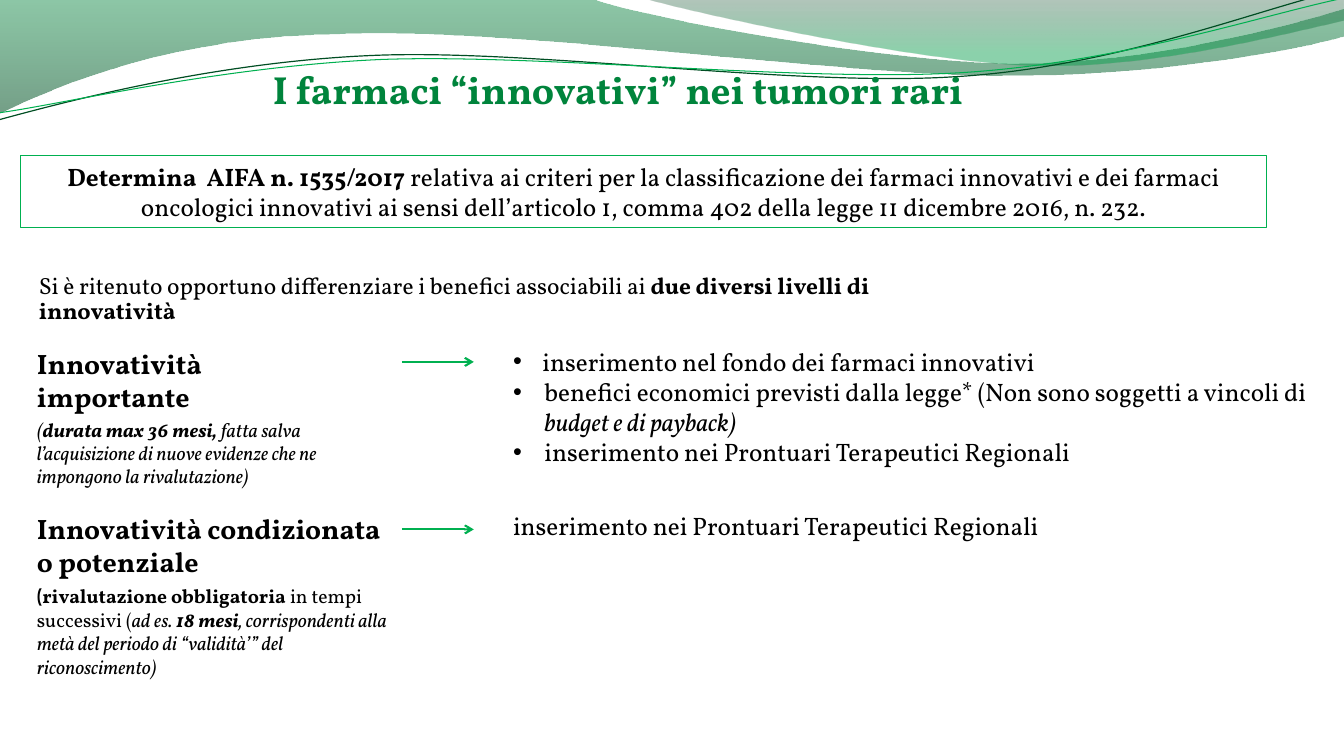
import pptx
import pptx.dml.color
import pptx.enum.shapes
import pptx.enum.text
import pptx.oxml
import pptx.oxml.ns
import pptx.util
from dataclasses import dataclass

Cm, Pt = pptx.util.Cm, pptx.util.Pt
RGB = pptx.dml.color.RGBColor.from_string
ALIGN, ANCHOR = pptx.enum.text.PP_ALIGN, pptx.enum.text.MSO_ANCHOR
qn, NS = pptx.oxml.ns.qn, pptx.oxml.ns.nsdecls("a")


@dataclass(frozen=True)
class Theme:
    font: str = "Vollkorn"
    title_color: str = "00843C"
    text: str = "000000"
    accent: str = "00B050"
    dark: str = "004E23"
    title: float = 28
    heading: float = 20
    body: float = 18
    intro: float = 16.7
    note: float = 14


T = Theme()


def set_frame(shape, box, inset=(0, 0), anchor=ANCHOR.TOP):
    """Place the shape at box (cm) and return its wrapped text frame."""
    shape.left, shape.top, shape.width, shape.height = map(Cm, box)
    tf = shape.text_frame
    tf.word_wrap = True
    tf.auto_size = pptx.enum.text.MSO_AUTO_SIZE.NONE
    tf.margin_left = tf.margin_right = Cm(inset[0])
    tf.margin_top = tf.margin_bottom = Cm(inset[1])
    tf.vertical_anchor = anchor
    return tf


def add_runs(p, size, runs, color=T.text, before=0):
    """Add (text, style) runs; style may hold b for bold and i for italic."""
    p.space_before = Pt(before)
    for text, style in runs:
        r = p.add_run()
        r.text = text
        r.font.name = T.font
        r.font.size = Pt(size)
        r.font.bold = "b" in style
        r.font.italic = "i" in style
        r.font.color.rgb = RGB(color)


prs = pptx.Presentation()
prs.slide_width, prs.slide_height = Cm(33.87), Cm(19.05)
s = prs.slides.add_slide(prs.slide_layouts[3])
title, intro, benefits = s.placeholders

# Header waves: each segment is one point (line) or three points (cubic curve), in cm
waves = [
    ((0, -0.02), [
        [(14.91, -0.03)],
        [(16.1, 0.43), (22.48, 1.6), (25.68, 1.6)],
        [(28.88, 1.6), (32.46, 0.66), (33.86, 0.23)],
        [(33.91, 0.91)],
        [(33.3, 1.12), (29.46, 1.93), (25.25, 1.91)],
        [(21.06, 1.91), (12.93, 0.71), (8.71, 0.86)],
        [(4.37, 0.91), (1.55, 2.11), (-0.03, 2.87)],
    ], [(0, "00823B", 45), (1, "005024", 55)], None),
    ((16.23, -0.03), [
        [(17.25, 0.28), (23.09, 1.57), (26.04, 1.65)],
        [(28.98, 1.75), (32.56, 0.81), (33.86, 0.53)],
        [(33.86, 0)],
    ], [(0, "00411E", 30), (0.8, "009B47", 45)], None),
    ((-0.03, 3.02), [
        [(1.63, 2.57), (5.36, 1.57), (9.37, 1.4)],
        [(13.39, 1.22), (20.04, 2.21), (24.13, 1.93)],
        [(28.19, 1.68), (31.78, 0.2), (33.81, -0.25)],
    ], None, (T.dark, 0.85)),
    ((0, 2.84), [
        [(1.6, 2.62), (5.54, 1.68), (9.6, 1.5)],
        [(13.64, 1.35), (20.21, 2.08), (24.26, 1.83)],
        [(28.32, 1.57), (31.88, 0.36), (33.88, -0.05)],
    ], None, (T.accent, 0.75)),
]
for layer, (start, segments, stops, line) in enumerate(waves):
    builder = s.shapes.build_freeform(*map(Cm, start))
    builder.add_line_segments([tuple(map(Cm, seg[-1])) for seg in segments], close=bool(stops))
    wave = builder.convert_to_shape()
    wave.shadow.inherit = False
    for edge, seg in zip(list(wave._element.iter(qn("a:lnTo"))), segments):
        if len(seg) == 3:
            pts = "".join(f'<a:pt x="{Cm(x) - wave.left}" y="{Cm(y) - wave.top}"/>' for x, y in seg)
            curve = pptx.oxml.parse_xml(f"<a:cubicBezTo {NS}>{pts}</a:cubicBezTo>")
            edge.getparent().replace(edge, curve)
    if stops:
        wave.line.fill.background()
        wave.fill.gradient()
        wave.fill.gradient_angle = 270
        for stop, (position, color, _) in zip(wave.fill.gradient_stops, stops):
            stop.position = position
            stop.color.rgb = RGB(color)
        for clr, (_, _, opacity) in zip(wave._element.spPr.iter(qn("a:srgbClr")), stops):
            clr.append(pptx.oxml.parse_xml(f'<a:alpha {NS} val="{opacity * 1000}"/>'))
    else:
        wave.fill.background()
        wave.line.color.rgb = RGB(line[0])
        wave.line.width = Pt(line[1])
    s.shapes._spTree.insert(2 + layer, wave._element)  # behind the placeholders

tf = set_frame(title, (0.33, 1.52, 30.48, 3.18), (0.25, 0.13))
tf.paragraphs[0].alignment = ALIGN.CENTER
add_runs(tf.paragraphs[0], T.title, [("I farmaci “innovativi” nei tumori rari", "b")], T.title_color)

decree = s.shapes.add_shape(pptx.enum.shapes.MSO_SHAPE.RECTANGLE, 0, 0, 0, 0)
decree.shadow.inherit = False
decree.fill.background()
decree.line.color.rgb = RGB(T.accent)
decree.line.width = Pt(0.75)
tf = set_frame(decree, (0.52, 3.92, 31.39, 1.81), (0.25, 0.13), ANCHOR.MIDDLE)
tf.paragraphs[0].alignment = ALIGN.CENTER
add_runs(tf.paragraphs[0], T.body, [
    ("Determina  AIFA n. 1535/2017 ", "b"),
    ("relativa ai criteri per la classificazione dei farmaci innovativi e dei farmaci oncologici "
     "innovativi ai sensi dell’articolo 1, comma 402 della legge 11 dicembre 2016, n. 232.", ""),
])

tf = set_frame(intro, (0.73, 6.32, 23.6, 2.08), (0.25, 0.59))
p = tf.paragraphs[0]
p.line_spacing = 0.9
add_runs(p, T.intro, [
    ("Si è ritenuto opportuno differenziare i benefici associabili ai ", ""),
    ("due diversi livelli di innovatività", "b"),
])
pPr = p._p.get_or_add_pPr()
pPr.set("marL", "0")
pPr.set("indent", "0")
pPr.append(pptx.oxml.parse_xml(f"<a:buNone {NS}/>"))

tf = set_frame(benefits, (12.93, 8.72, 19.99, 3.07))
items = [
    (0.74, [("inserimento nel fondo dei farmaci innovativi", "")]),
    (0.79, [("benefici economici previsti dalla legge* (Non sono soggetti a vincoli di ", ""),
            ("budget e di payback)", "i")]),
    (0.79, [("inserimento nei Prontuari Terapeutici Regionali", "")]),
]
for i, (indent, runs) in enumerate(items):
    p = tf.add_paragraph() if i else tf.paragraphs[0]
    p.alignment = ALIGN.JUSTIFY if i else ALIGN.LEFT
    add_runs(p, T.body, runs)
    pPr = p._p.get_or_add_pPr()
    pPr.set("marL", str(Cm(indent)))
    pPr.set("indent", str(-Cm(indent)))
    pPr.append(pptx.oxml.parse_xml(f'<a:buFont {NS} typeface="Arial"/>'))
    pPr.append(pptx.oxml.parse_xml(f'<a:buChar {NS} char="•"/>'))

levels = [
    ((0.93, 8.72, 7.95, 2.72), ["Innovatività importante"], Pt(16.4), [
        ("(", "i"), ("durata max 36 mesi, ", "bi"),
        ("fatta salva l’acquisizione di nuove evidenze che ne impongono la rivalutazione)", "i"),
    ]),
    ((0.93, 12.88, 8.99, 4.24), ["Innovatività condizionata", "o potenziale"], None, [
        ("(", "b"), ("rivalutazione obbligatoria ", "b"), ("in tempi successivi (", ""),
        ("ad es. ", "i"), ("18 mesi", "bi"),
        (", corrispondenti alla metà del periodo di “validità’” del riconoscimento)", "i"),
    ]),
]
for box, headings, spacing, note in levels:
    tf = set_frame(s.shapes.add_textbox(0, 0, 0, 0), box)
    for i, heading in enumerate(headings):
        p = tf.add_paragraph() if i else tf.paragraphs[0]
        add_runs(p, T.heading, [(heading, "b")])
    p = tf.add_paragraph()
    p.line_spacing = spacing
    add_runs(p, T.note, note, before=4)
p.runs[0].font.name = "Cabin"

tf = set_frame(s.shapes.add_textbox(0, 0, 0, 0), (12.93, 12.88, 16.41, 0.74))
tf.paragraphs[0].line_spacing = Pt(21.1)
add_runs(tf.paragraphs[0], T.body, [("inserimento nei Prontuari Terapeutici Regionali", "")])

for y in (9.12, 13.34):
    arrow = s.shapes.add_connector(
        pptx.enum.shapes.MSO_CONNECTOR.STRAIGHT, Cm(10.13), Cm(y), Cm(11.94), Cm(y))
    arrow.line.color.rgb = RGB(T.accent)
    arrow.line.width = Pt(1.5)
    arrow.line._get_or_add_ln().append(pptx.oxml.parse_xml(f'<a:tailEnd {NS} type="arrow"/>'))
    arrow._element.spPr.append(pptx.oxml.parse_xml(f"<a:effectLst {NS}/>"))

prs.save("out.pptx")
